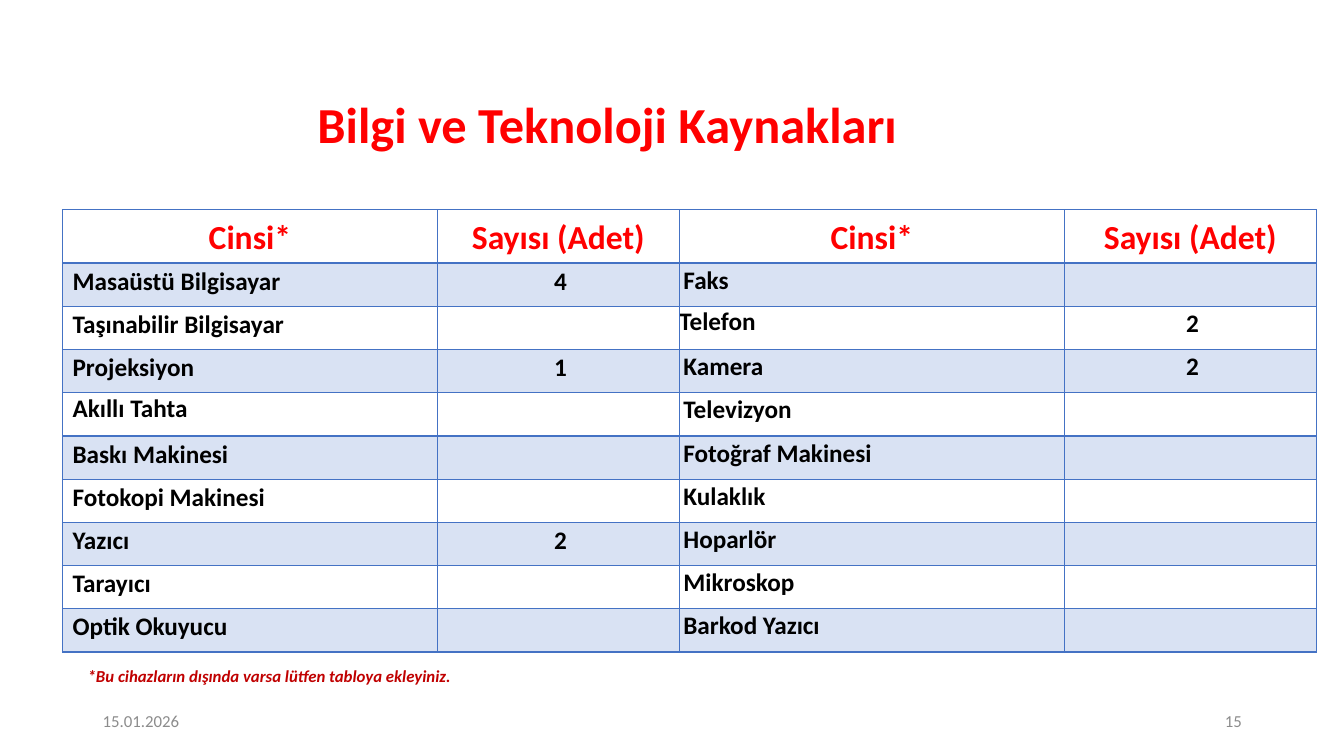
from dataclasses import dataclass

from lxml.etree import SubElement
from pptx import Presentation
from pptx.dml.color import RGBColor
from pptx.enum.text import MSO_ANCHOR as Anchor, MSO_AUTO_SIZE as AutoSize, PP_ALIGN as Align
from pptx.oxml import parse_xml
from pptx.oxml.ns import nsdecls, qn
from pptx.util import Emu, Inches, Pt


@dataclass(frozen=True)
class Theme:
    font: str = "Calibri"
    red: str = "FF0000"
    dark_red: str = "C00000"
    black: str = "000000"
    gray: str = "8C8C8C"
    blue: str = "4472C4"
    band_opacity: int = 20
    title: int = 36
    header: int = 24
    body: int = 18
    small: int = 12


@dataclass(frozen=True)
class Box:
    left: float
    top: float
    width: float
    height: float

    def emu(self) -> tuple[Emu, Emu, Emu, Emu]:
        return across(self.left), down(self.top), across(self.width), down(self.height)


@dataclass(frozen=True)
class Label:
    text: str
    box: Box
    color: str
    align: Align = Align.LEFT
    anchor: Anchor = Anchor.MIDDLE
    bold: bool = False
    italic: bool = False


@dataclass(frozen=True)
class Device:
    name: str
    count: str = ""
    indent: float = 0.04
    spaced: bool = True


THEME = Theme()
SLIDE_W, SLIDE_H = Inches(13.33), Inches(7.5)
TITLE_BOX = Box(2.18, 11.33, 86.03, 11.07)
TABLE_BOX = Box(4.65, 27.73, 93.3, 58.55)
COLUMN_SHARES = (27.9, 18, 28.65, 18.75)
HEADER_SHARE, ROW_SHARE = 7.07, 5.72
HEADERS = ("Cinsi*", "Sayısı (Adet)") * 2
LEFT_DEVICES = (
    Device("Masaüstü Bilgisayar", "4"),
    Device("Taşınabilir Bilgisayar"),
    Device("Projeksiyon", "1"),
    Device("Akıllı Tahta", spaced=False),
    Device("Baskı Makinesi"),
    Device("Fotokopi Makinesi"),
    Device("Yazıcı", "2"),
    Device("Tarayıcı"),
    Device("Optik Okuyucu"),
)
RIGHT_DEVICES = (
    Device("Faks"),
    Device("Telefon", "2", indent=0, spaced=False),
    Device("Kamera", "2"),
    Device("Televizyon"),
    Device("Fotoğraf Makinesi"),
    Device("Kulaklık"),
    Device("Hoparlör"),
    Device("Mikroskop"),
    Device("Barkod Yazıcı"),
)
LABELS = (
    Label("15.01.2026", Box(6.9, 92.67, 22.5, 5.33), THEME.gray),
    Label("15", Box(70.65, 92.67, 22.5, 5.33), THEME.gray, align=Align.RIGHT),
    Label("*Bu cihazların dışında varsa lütfen tabloya ekleyiniz.", Box(5.78, 87.47, 37.5, 4),
          THEME.dark_red, anchor=Anchor.TOP, bold=True, italic=True),
)


def across(share: float) -> Emu:
    return Emu(round(SLIDE_W * share / 100))


def down(share: float) -> Emu:
    return Emu(round(SLIDE_H * share / 100))


def write(tf, text: str, *, size: int, color: str, align: Align = Align.LEFT,
          bold: bool = True, italic: bool = False, indent: float = 0,
          line: float = 1.0, after: int = 0) -> None:
    p = tf.paragraphs[0]
    p.alignment, p.line_spacing = align, line
    p.space_before, p.space_after = Pt(0), Pt(after)
    if indent:
        p._p.get_or_add_pPr().set("marL", str(Inches(indent)))
    r = p.add_run()
    r.text = text
    r.font.name, r.font.size = THEME.font, Pt(size)
    r.font.bold, r.font.italic = bold, italic
    r.font.color.rgb = RGBColor.from_string(color)


def style_cell(cell, row: int, column: int) -> None:
    side, top = (0.06, 0.01) if column < 2 else (0, 0)
    cell.margin_left = cell.margin_right = Inches(side)
    cell.margin_top, cell.margin_bottom = Inches(top), Inches(0)
    cell.vertical_anchor = Anchor.TOP if row else Anchor.MIDDLE
    if row % 2:
        cell.fill.solid()
        cell.fill.fore_color.rgb = RGBColor.from_string(THEME.blue)
        tint = cell._tc.tcPr.find(".//" + qn("a:srgbClr"))
        SubElement(tint, qn("a:alpha")).set("val", str(THEME.band_opacity * 1000))
    else:
        cell.fill.background()
    widths = {"L": 1, "R": 1, "T": 2 if row == 1 else 1, "B": 1 if row else 2}
    for position, (edge, width) in enumerate(widths.items()):
        cell._tc.tcPr.insert(position, parse_xml(
            f'<a:ln{edge} {nsdecls("a")} w="{Pt(width)}"><a:solidFill>'
            f'<a:srgbClr val="{THEME.blue}"/></a:solidFill></a:ln{edge}>'))


def add_device_table(slide) -> None:
    table = slide.shapes.add_table(len(LEFT_DEVICES) + 1, len(HEADERS), *TABLE_BOX.emu()).table
    table.first_row = table.horz_banding = False
    for column, share in zip(table.columns, COLUMN_SHARES):
        column.width = across(share)
    for i, row in enumerate(table.rows):
        row.height = down(ROW_SHARE if i else HEADER_SHARE)
        for j, cell in enumerate(row.cells):
            style_cell(cell, i, j)
    for j, header in enumerate(HEADERS):
        write(table.cell(0, j).text_frame, header, size=THEME.header, color=THEME.red,
              align=Align.CENTER, line=1.07, after=8)
    for start, devices in ((0, LEFT_DEVICES), (2, RIGHT_DEVICES)):
        for i, device in enumerate(devices, 1):
            line, after = (1.07, 8) if device.spaced else (1.0, 0)
            write(table.cell(i, start).text_frame, device.name, size=THEME.body,
                  color=THEME.black, indent=device.indent, line=line, after=after)
            if device.count:
                write(table.cell(i, start + 1).text_frame, device.count, size=THEME.body,
                      color=THEME.black, align=Align.CENTER, indent=0.04, line=1.07, after=8)


def add_title(slide) -> None:
    sp = slide.shapes.title
    sp.left, sp.top, sp.width, sp.height = TITLE_BOX.emu()
    tf = sp.text_frame
    tf.auto_size, tf.vertical_anchor = AutoSize.NONE, Anchor.MIDDLE
    write(tf, "Bilgi ve Teknoloji Kaynakları", size=THEME.title, color=THEME.red,
          align=Align.CENTER, line=0.9)


def add_label(slide, label: Label) -> None:
    tf = slide.shapes.add_textbox(*label.box.emu()).text_frame
    tf.word_wrap, tf.vertical_anchor = True, label.anchor
    write(tf, label.text, size=THEME.small, color=label.color, align=label.align,
          bold=label.bold, italic=label.italic)


def main() -> None:
    prs = Presentation()
    prs.slide_width, prs.slide_height = SLIDE_W, SLIDE_H
    slide = prs.slides.add_slide(prs.slide_layouts.get_by_name("Title Only"))
    add_title(slide)
    add_device_table(slide)
    for label in LABELS:
        add_label(slide, label)
    prs.save("out.pptx")


if __name__ == "__main__":
    main()
